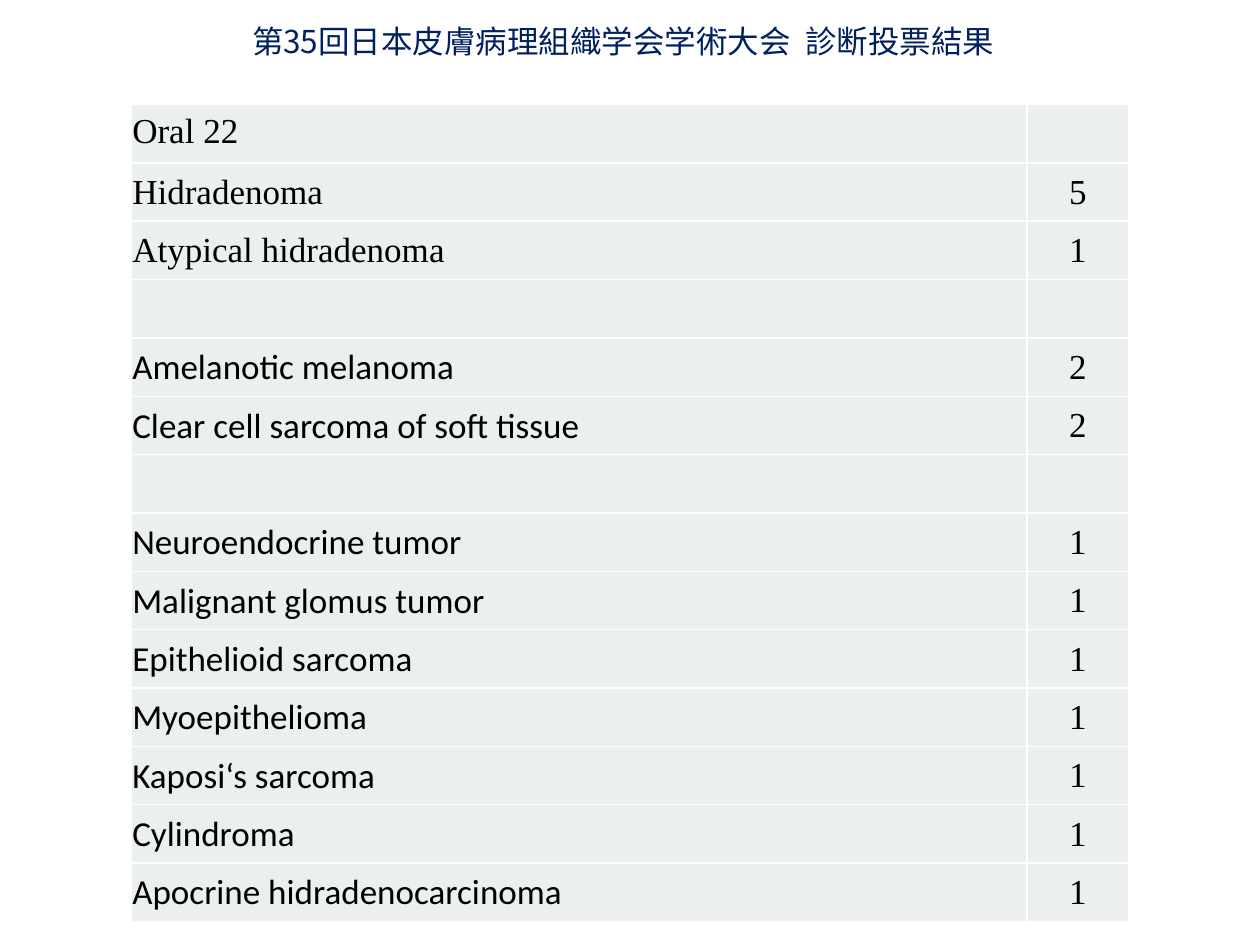
from dataclasses import dataclass

from lxml import etree
from pptx import Presentation
from pptx import util as u
from pptx.dml.color import RGBColor
from pptx.enum import text
from pptx.oxml.ns import qn

SERIF, SANS, CJK = "Times New Roman", "Calibri", "Noto Sans CJK JP"
ROW_HEIGHT = 0.463
COLUMN_WIDTHS = (7.11, 0.81)


@dataclass
class Vote:
    diagnosis: str = ""
    count: str = ""
    font: str = SANS


VOTES = [
    Vote("Oral 22", font=SERIF),
    Vote("Hidradenoma", "5", SERIF),
    Vote("Atypical hidradenoma", "1", SERIF),
    Vote(),
    Vote("Amelanotic melanoma", "2"),
    Vote("Clear cell sarcoma of soft tissue", "2"),
    Vote(),
    Vote("Neuroendocrine tumor", "1"),
    Vote("Malignant glomus tumor", "1"),
    Vote("Epithelioid sarcoma", "1"),
    Vote("Myoepithelioma", "1"),
    Vote("Kaposi‘s sarcoma", "1"),
    Vote("Cylindroma", "1"),
    Vote("Apocrine hidradenocarcinoma", "1"),
]


def color(value: str) -> RGBColor:
    return RGBColor.from_string(value)


def set_borders(cell, value: str, points: float) -> None:
    """Draw all four borders; they precede the fill in the cell properties."""
    tc_pr = cell._tc.get_or_add_tcPr()
    for i, side in enumerate(("lnL", "lnR", "lnT", "lnB")):
        ln = etree.Element(qn(f"a:{side}"), w=str(int(u.Pt(points))))
        fill = etree.SubElement(ln, qn("a:solidFill"))
        etree.SubElement(fill, qn("a:srgbClr"), val=value)
        tc_pr.insert(i, ln)


def fill_cell(cell, content: str, font: str, align, bottom: float) -> None:
    cell.fill.solid()
    cell.fill.fore_color.rgb = color("EBF0EC")
    set_borders(cell, "FFFFFF", 1)
    cell.vertical_anchor = text.MSO_ANCHOR.MIDDLE
    cell.margin_left = cell.margin_right = cell.margin_top = u.Inches(0.01)
    cell.margin_bottom = u.Inches(bottom)
    p = cell.text_frame.paragraphs[0]
    p.alignment = align
    p.font.size = u.Pt(20)
    p.font.name = font
    p.font.color.rgb = color("000000")
    if content:
        p.add_run().text = content


def add_title(s, title: str) -> None:
    sp = s.shapes.title
    sp.left, sp.top = u.Inches(1.9), u.Inches(0.12)
    sp.width, sp.height = u.Inches(6.2), u.Inches(0.4)
    tf = sp.text_frame
    tf.text = title
    tf.word_wrap = True
    tf.auto_size = text.MSO_AUTO_SIZE.NONE
    tf.vertical_anchor = text.MSO_ANCHOR.TOP
    p = tf.paragraphs[0]
    p.alignment = text.PP_ALIGN.LEFT
    p.line_spacing = u.Pt(22)
    p.font.size = u.Pt(18)
    p.font.color.rgb = color("002060")
    # Latin and East Asian text share one typeface
    r = p.runs[0]
    r.font.name = CJK
    etree.SubElement(r._r.get_or_add_rPr(), qn("a:ea"), typeface=CJK)


def add_votes(s, votes: list[Vote]) -> None:
    frame = s.shapes.add_table(
        len(votes), len(COLUMN_WIDTHS), u.Inches(1.04), u.Inches(0.83),
        u.Inches(sum(COLUMN_WIDTHS)), u.Inches(ROW_HEIGHT * len(votes)))
    table = frame.table
    table.first_row = table.horz_banding = False
    for column, width in zip(table.columns, COLUMN_WIDTHS):
        column.width = u.Inches(width)
    for i, vote in enumerate(votes):
        table.rows[i].height = u.Inches(ROW_HEIGHT)
        bottom = 0 if i else 0.05
        fill_cell(table.cell(i, 0), vote.diagnosis, vote.font,
                  text.PP_ALIGN.LEFT, bottom)
        fill_cell(table.cell(i, 1), vote.count, SERIF,
                  text.PP_ALIGN.CENTER, bottom)


def main() -> None:
    prs = Presentation()
    prs.slide_width, prs.slide_height = u.Inches(10), u.Inches(7.5)
    s = prs.slides.add_slide(prs.slide_layouts[5])
    add_title(s, "第35回日本皮膚病理組織学会学術大会  診断投票結果")
    add_votes(s, VOTES)
    prs.save("out.pptx")


if __name__ == "__main__":
    main()
